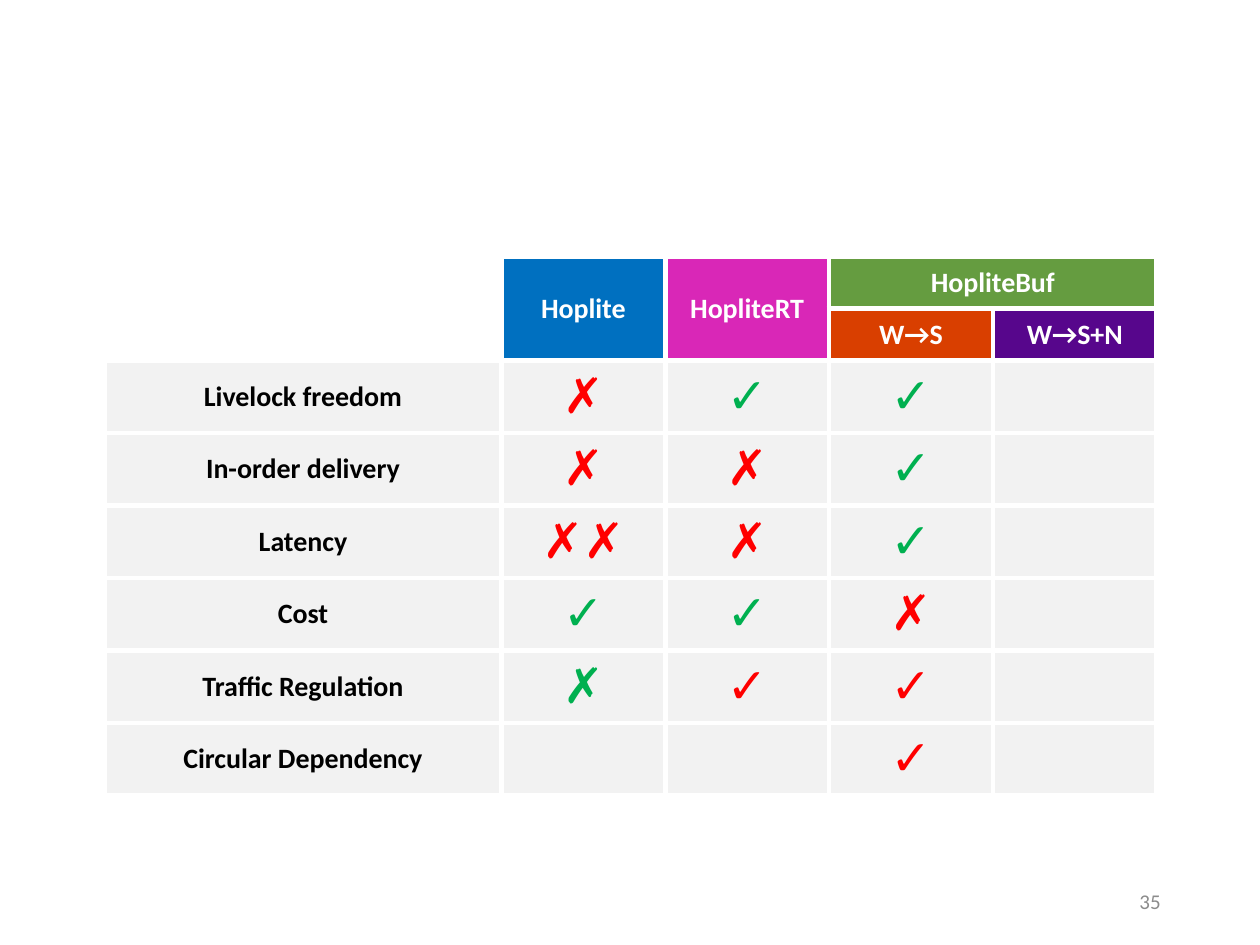
from itertools import product
from lxml import etree
from pptx import Presentation
from pptx import util as u
from pptx.dml.color import RGBColor
from pptx.enum import text as t
from pptx.oxml import ns

WHITE = RGBColor(0xFF, 0xFF, 0xFF)
BLACK = RGBColor(0, 0, 0)
GRAY = RGBColor(0x8C, 0x8C, 0x8C)
PALE = RGBColor(0xF2, 0xF2, 0xF2)
RED = RGBColor(0xFF, 0, 0)
GREEN = RGBColor(0, 0xB0, 0x50)
BLUE = RGBColor(0, 0x70, 0xC0)
PINK = RGBColor(0xD9, 0x27, 0xB7)
LEAF = RGBColor(0x65, 0x9C, 0x40)
RUST = RGBColor(0xD9, 0x3F, 0)
PLUM = RGBColor(0x57, 0x06, 0x8C)

WIDTHS = [3.15, 1.3, 1.3, 1.3, 1.3]
HEADS = [
    (0, 1, 1, 1, "Hoplite", BLUE),
    (0, 2, 1, 2, "HopliteRT", PINK),
    (0, 3, 0, 4, "HopliteBuf", LEAF),
    (1, 3, 1, 3, "W→S", RUST),
    (1, 4, 1, 4, "W→S+N", PLUM),
]
ROWS = [
    ("Livelock freedom", ("✗", RED), ("✓", GREEN), ("✓", GREEN)),
    ("In-order delivery", ("✗", RED), ("✗", RED), ("✓", GREEN)),
    ("Latency", ("✗✗", RED), ("✗", RED), ("✓", GREEN)),
    ("Cost", ("✓", GREEN), ("✓", GREEN), ("✗", RED)),
    ("Traffic Regulation", ("✗", GREEN), ("✓", RED), ("✓", RED)),
    ("Circular Dependency", ("", RED), ("", RED), ("✓", RED)),
]


def write(frame, words, size, color, bold=True, align=t.PP_ALIGN.CENTER):
    """Put one formatted line of text into a frame."""
    para = frame.paragraphs[0]
    para.alignment = align
    font = para.font
    if words:
        run = para.add_run()
        run.text = words
        font = run.font
    for key, val in {"name": "Calibri", "size": u.Pt(size), "bold": bold}.items():
        setattr(font, key, val)
    font.color.rgb = color


def edge(cell):
    """Give a cell white borders on all four sides."""
    props = cell._tc.get_or_add_tcPr()
    for spot, side in enumerate(("lnL", "lnR", "lnT", "lnB")):
        line = etree.Element(ns.qn(f"a:{side}"), w=str(u.Pt(3)))
        fill = etree.SubElement(line, ns.qn("a:solidFill"))
        etree.SubElement(fill, ns.qn("a:srgbClr"), val=str(WHITE))
        props.insert(spot, line)


def paint(cell, words, size, color, back):
    """Fill a cell and write its centred text."""
    cell.fill.solid()
    cell.fill.fore_color.rgb = back
    cell.vertical_anchor = t.MSO_ANCHOR.MIDDLE
    write(cell.text_frame, words, size, color)


def add_grid(slide, left, top, width, height):
    """Add the table that compares the designs."""
    count = len(ROWS) + 2
    grid = slide.shapes.add_table(count, len(WIDTHS), left, top, width, height).table
    for key in ("first_row", "horz_banding"):
        setattr(grid, key, False)
    for col, wide in zip(grid.columns, WIDTHS):
        col.width = u.Inches(wide)
    for num, row in enumerate(grid.rows):
        row.height = u.Inches(0.41 if num < 2 else 0.57)
    for row, col in product(range(count), range(len(WIDTHS))):
        cell = grid.cell(row, col)
        edge(cell)
        cell.fill.background()
    grid.cell(0, 0).merge(grid.cell(1, 0))
    for row, col, end, last, words, back in HEADS:
        cell = grid.cell(row, col)
        if (row, col) != (end, last):
            cell.merge(grid.cell(end, last))
        paint(cell, words, 16, WHITE, back)
    for row, (label, *marks) in enumerate(ROWS, 2):
        paint(grid.cell(row, 0), label, 16, BLACK, PALE)
        for col, (mark, color) in enumerate(marks + [("", RED)], 1):
            paint(grid.cell(row, col), mark, 28, color, PALE)


def add_page(slide, left, top, width, height):
    """Add the page number."""
    frame = slide.shapes.add_textbox(left, top, width, height).text_frame
    frame.word_wrap = True
    frame.vertical_anchor = t.MSO_ANCHOR.MIDDLE
    write(frame, "35", 12, GRAY, False, t.PP_ALIGN.RIGHT)


def main():
    """Build the slide and save it."""
    deck = Presentation()
    deck.slide_width, deck.slide_height = u.Inches(10), u.Inches(7.5)
    slide = deck.slides.add_slide(deck.slide_layouts[6])
    add_grid(slide, *map(u.Inches, (0.83, 2.04, 8.35, 4.21)))
    add_page(slide, *map(u.Inches, (7.06, 6.95, 2.25, 0.4)))
    deck.save("out.pptx")


if __name__ == "__main__":
    main()
